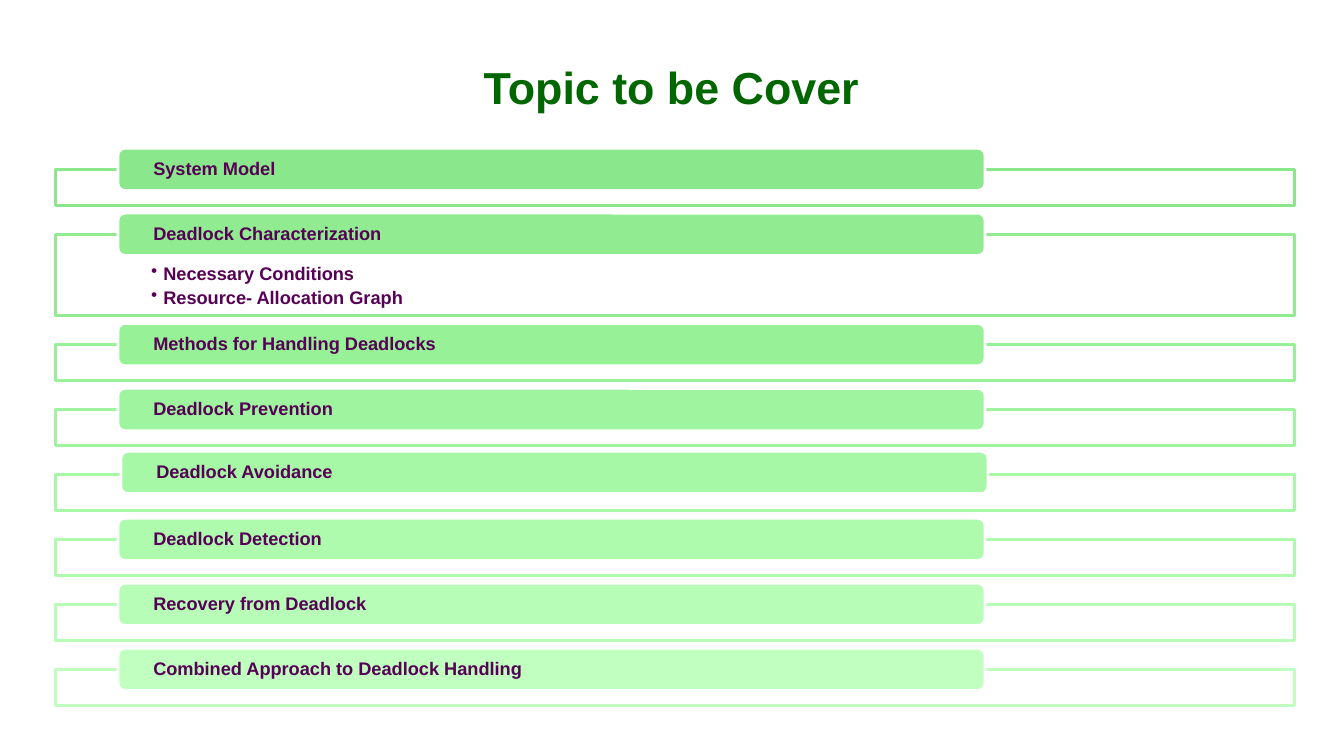
"""Build the agenda slide: a title above eight framed topic bars."""
from dataclasses import dataclass

from lxml.etree import SubElement
from pptx import Presentation
from pptx.dml.color import RGBColor as Rgb
from pptx.enum.shapes import MSO_SHAPE as Shape
from pptx.enum.text import MSO_ANCHOR as Anchor, PP_ALIGN as Align
from pptx.oxml.ns import qn
from pptx.util import Inches, Pt


@dataclass(frozen=True)
class Theme:
    font: str = "Arial"
    title: str = "006600"
    text: str = "560056"
    white: str = "FFFFFF"
    head: int = 32
    body: int = 13
    line: int = 2


theme = Theme()


def add_box(kind, left, top, width, height, fill, line):
    box = slide.shapes.add_shape(
        kind, Inches(left), Inches(top), Inches(width), Inches(height))
    box.shadow.inherit = False
    box.fill.solid()
    box.fill.fore_color.rgb = Rgb.from_string(fill)
    box.line.color.rgb = Rgb.from_string(line)
    box.line.width = Pt(theme.line)
    return box


def add_text(para, text, size, color, align):
    para.alignment = align
    run = para.add_run()
    run.text = text
    run.font.name = theme.font
    run.font.size = Pt(size)
    run.font.bold = True
    run.font.color.rgb = Rgb.from_string(color)


deck = Presentation()
deck.slide_width, deck.slide_height = Inches(13.33), Inches(7.5)
slide = deck.slides.add_slide(deck.slide_layouts[6])

title = slide.shapes.add_textbox(
    Inches(2.35), Inches(0.31), Inches(8.62), Inches(1.09)).text_frame
title.word_wrap = True
title.vertical_anchor = Anchor.MIDDLE
add_text(title.paragraphs[0], "Topic to be Cover", theme.head, theme.title, Align.CENTER)

topics = [
    ("System Model", "8BE78B", []),
    ("Deadlock Characterization", "91EC91",
     ["Necessary Conditions", "Resource- Allocation Graph"]),
    ("Methods for Handling Deadlocks", "97F197", []),
    ("Deadlock Prevention", "9FF59F", []),
    ("Deadlock Avoidance", "A6F8A6", []),
    ("Deadlock Detection", "AEFBAE", []),
    ("Recovery from Deadlock", "B7FDB7", []),
    ("Combined Approach to Deadlock Handling", "C0FFC0", []),
]
shifts = {"Deadlock Avoidance": (0.03, -0.02)}
first, last = 1.68, 6.64
low, tall = 0.36, 0.81
heights = [tall if points else low for _, _, points in topics]
gap = (last - first - sum(heights[:-1])) / (len(topics) - 1)

top = first
for (name, color, points), height in zip(topics, heights):
    frame = add_box(Shape.RECTANGLE, 0.55, top, 12.29, height, theme.white, color)
    if points:
        body = frame.text_frame
        body.word_wrap = True
        body.vertical_anchor = Anchor.TOP
        body.margin_left = body.margin_right = Inches(0.95)
        body.margin_top, body.margin_bottom = Inches(0.3), Inches(0.1)
        for index, point in enumerate(points):
            para = body.add_paragraph() if index else body.paragraphs[0]
            para.level = 1
            para.line_spacing = 0.9
            para.space_after = Pt(3)
            add_text(para, point, theme.body, theme.text, Align.LEFT)
            props = para._p.get_or_add_pPr()
            props.set("marL", str(Inches(0.12)))
            props.set("indent", str(-Inches(0.12)))
            SubElement(props, qn("a:buChar")).set("char", "•")

    across, down = shifts.get(name, (0, 0))
    bar = add_box(Shape.ROUNDED_RECTANGLE, 1.17 + across, top - 0.21 + down,
                  8.6, 0.42, color, theme.white)
    label = bar.text_frame
    label.word_wrap = True
    label.vertical_anchor = Anchor.MIDDLE
    label.margin_left = label.margin_right = Inches(0.33)
    label.margin_top = label.margin_bottom = 0
    label.paragraphs[0].line_spacing = 0.9
    add_text(label.paragraphs[0], name, theme.body, theme.text, Align.LEFT)
    top += height + gap

deck.save("out.pptx")
